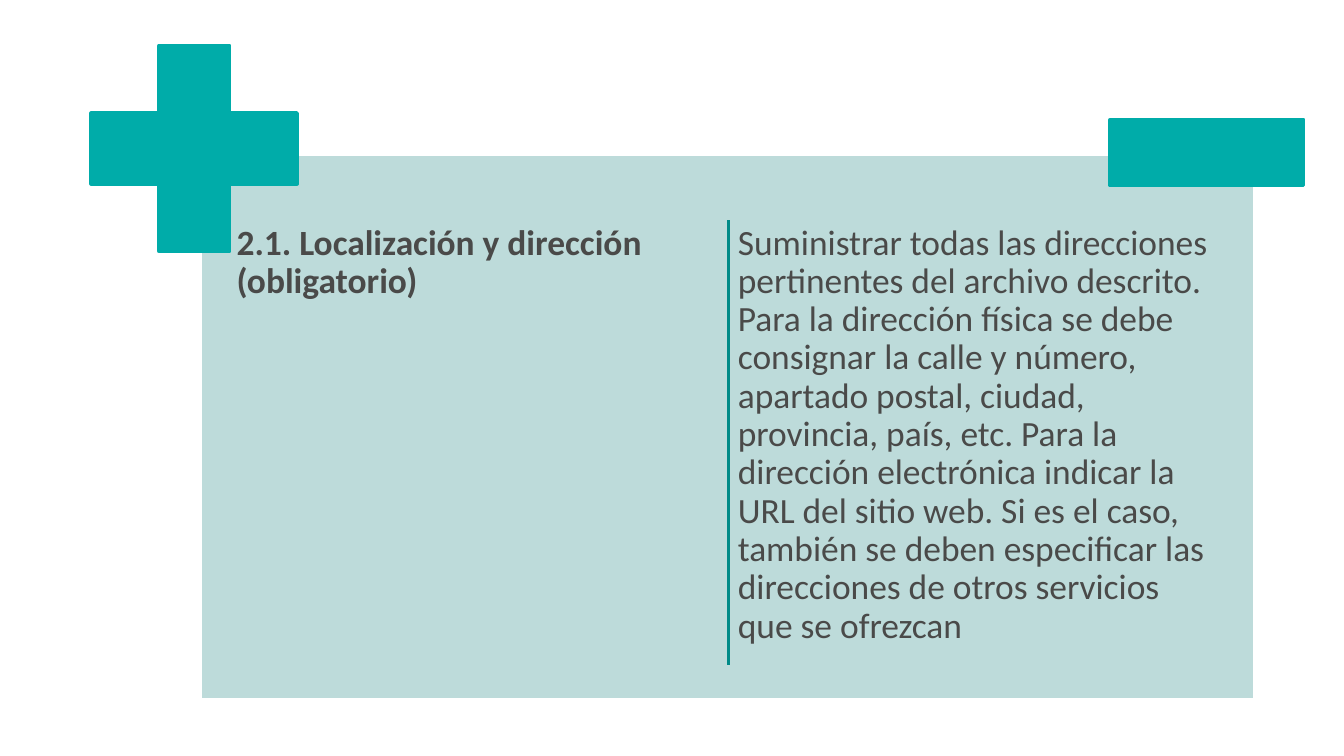
from dataclasses import dataclass

import lxml.etree
import pptx
import pptx.dml.color
import pptx.enum.shapes
import pptx.enum.text
import pptx.oxml.ns
import pptx.util

Inches = pptx.util.Inches
Shape = pptx.enum.shapes.MSO_SHAPE


@dataclass(frozen=True)
class Theme:
    font: str = "Calibri"
    text_size: float = 19
    line_width: float = 2
    text: str = "4A4A49"
    white: str = "FFFFFF"
    panel: str = "BDDBDA"
    accent: str = "00ACA9"
    divider: str = "008A87"


@dataclass(frozen=True)
class Block:
    preset: Shape
    left: float
    top: float
    width: float
    height: float
    fill: str
    line: str
    adjustment: float | None = None


@dataclass(frozen=True)
class Column:
    left: float
    text: str
    bold: bool = False


THEME = Theme()
COLUMN_TOP, COLUMN_WIDTH, COLUMN_HEIGHT = 1.63, 3.65, 3.47
DIVIDER_LEFT, DIVIDER_TOP, DIVIDER_BOTTOM = 5.42, 1.64, 4.95

PANEL = Block(Shape.RECTANGLE, 1.49, 1.15, 7.85, 4.06, THEME.panel, THEME.white)
SIGNS = [
    Block(Shape.CROSS, 0.68, 0.34, 1.53, 1.53, THEME.accent, THEME.accent, 0.328),
    Block(Shape.RECTANGLE, 8.26, 0.89, 1.44, 0.49, THEME.accent, THEME.accent),
]
COLUMNS = [
    Column(1.72, "2.1. Localización y dirección (obligatorio)", bold=True),
    Column(
        5.45,
        "Suministrar todas las direcciones pertinentes del archivo descrito. "
        "Para la dirección física se debe consignar la calle y número, apartado "
        "postal, ciudad, provincia, país, etc. Para la dirección electrónica "
        "indicar la URL del sitio web. Si es el caso, también se deben especificar "
        "las direcciones de otros servicios que se ofrezcan",
    ),
]


def color(value: str) -> pptx.dml.color.RGBColor:
    return pptx.dml.color.RGBColor.from_string(value)


def draw_block(page: pptx.slide.Slide, block: Block) -> None:
    shape = page.shapes.add_shape(
        block.preset, Inches(block.left), Inches(block.top),
        Inches(block.width), Inches(block.height),
    )
    shape.shadow.inherit = False
    if block.adjustment is not None:
        shape.adjustments[0] = block.adjustment
    shape.fill.solid()
    shape.fill.fore_color.rgb = color(block.fill)
    shape.line.color.rgb = color(block.line)
    shape.line.width = pptx.util.Pt(THEME.line_width)


def draw_column(page: pptx.slide.Slide, column: Column) -> None:
    box = page.shapes.add_textbox(
        Inches(column.left), Inches(COLUMN_TOP),
        Inches(COLUMN_WIDTH), Inches(COLUMN_HEIGHT),
    )
    frame = box.text_frame
    frame.word_wrap = True
    frame.vertical_anchor = pptx.enum.text.MSO_ANCHOR.TOP
    frame.margin_left = frame.margin_right = Inches(0.04)
    frame.margin_top = frame.margin_bottom = Inches(0.04)
    frame.text = column.text
    para = frame.paragraphs[0]
    para.line_spacing = 0.9
    span = para.runs[0]
    span.font.name = THEME.font
    span.font.size = pptx.util.Pt(THEME.text_size)
    span.font.bold = column.bold
    span.font.color.rgb = color(THEME.text)


def draw_divider(page: pptx.slide.Slide) -> None:
    divider = page.shapes.add_connector(
        pptx.enum.shapes.MSO_CONNECTOR.STRAIGHT,
        Inches(DIVIDER_LEFT), Inches(DIVIDER_TOP),
        Inches(DIVIDER_LEFT), Inches(DIVIDER_BOTTOM),
    )
    divider.line.color.rgb = color(THEME.divider)
    divider.line.width = pptx.util.Pt(THEME.line_width)
    properties = divider._element.spPr
    lxml.etree.SubElement(properties, pptx.oxml.ns.qn("a:effectLst"))


def main() -> None:
    # Widescreen page, 16 to 9
    deck = pptx.Presentation()
    deck.slide_width = Inches(10)
    deck.slide_height = Inches(10 * 9 / 16)
    # The slide has no title, so it uses the blank layout
    page = deck.slides.add_slide(deck.slide_layouts[6])

    # Panel with its two text columns
    draw_block(page, PANEL)
    for column in COLUMNS:
        draw_column(page, column)

    # Plus and minus signs on the panel's corners
    for sign in SIGNS:
        draw_block(page, sign)

    # Line between the columns
    draw_divider(page)

    deck.save("out.pptx")


if __name__ == "__main__":
    main()
